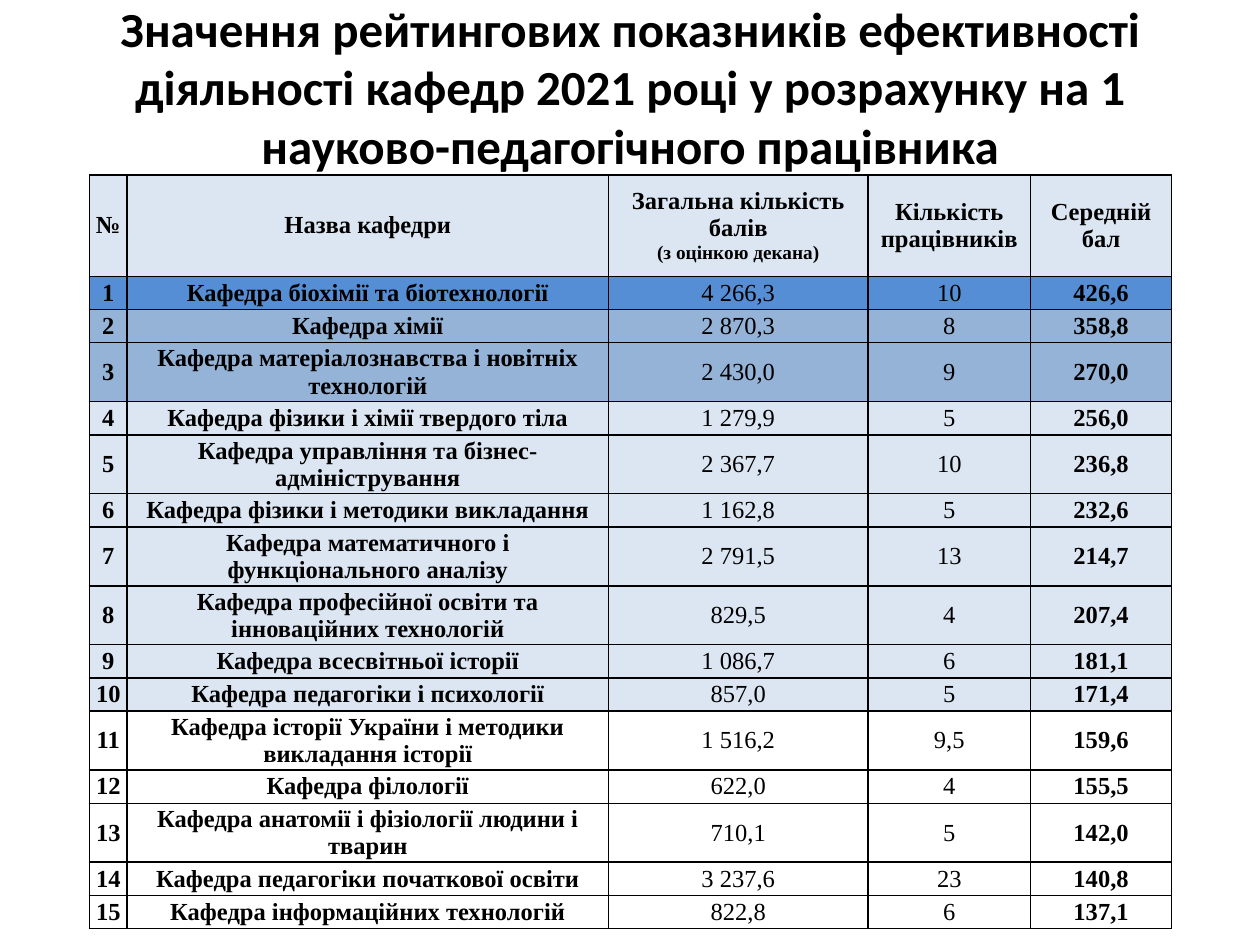
from lxml.etree import SubElement
from pptx import Presentation
from pptx.dml.color import RGBColor
from pptx.enum.text import MSO_ANCHOR as Anchor, PP_ALIGN as Align
from pptx.oxml.ns import qn
from pptx.util import Inches, Pt

HEAD = ["№", "Назва кафедри", "Загальна кількість балів\n(з оцінкою декана)",
        "Кількість працівників", "Середній бал"]
DATA = [
    ("Кафедра біохімії та біотехнології", "4 266,3", "10", "426,6"),
    ("Кафедра хімії", "2 870,3", "8", "358,8"),
    ("Кафедра матеріалознавства і новітніх технологій", "2 430,0", "9", "270,0"),
    ("Кафедра фізики і хімії твердого тіла", "1 279,9", "5", "256,0"),
    ("Кафедра управління та бізнес-адміністрування", "2 367,7", "10", "236,8"),
    ("Кафедра фізики і методики викладання", "1 162,8", "5", "232,6"),
    ("Кафедра математичного і функціонального аналізу", "2 791,5", "13", "214,7"),
    ("Кафедра професійної освіти та інноваційних технологій", "829,5", "4", "207,4"),
    ("Кафедра всесвітньої історії", "1 086,7", "6", "181,1"),
    ("Кафедра педагогіки і психології", "857,0", "5", "171,4"),
    ("Кафедра історії України і методики викладання історії", "1 516,2", "9,5", "159,6"),
    ("Кафедра філології", "622,0", "4", "155,5"),
    ("Кафедра анатомії і фізіології людини і тварин", "710,1", "5", "142,0"),
    ("Кафедра педагогіки початкової освіти", "3 237,6", "23", "140,8"),
    ("Кафедра інформаційних технологій", "822,8", "6", "137,1"),
]
FILLS = ["DCE6F2", "558ED5"] + ["95B3D7"] * 2 + ["DCE6F2"] * 7 + ["FFFFFF"] * 5
COLS = [3, 38.2, 20.6, 12.9, 11.2]  # percent of slide width
TALL, LOW, HIGH = 10.74, 3.52, 5.74  # row heights, percent of slide height
TWO_LINE = {3, 5, 7, 8, 11, 13}


def style(para, font, size, bold=True):
    para.alignment = Align.CENTER
    para.font.name, para.font.size, para.font.bold = font, Pt(size), bold
    para.font.color.rgb = RGBColor.from_string("000000")


def frame(cell, color):
    """Draw a 1 pt line on all four sides of a cell."""
    props = cell._tc.get_or_add_tcPr()
    for i, side in enumerate(("lnL", "lnR", "lnT", "lnB")):
        line = props.makeelement(qn("a:" + side), {"w": str(Pt(1))})
        fill = SubElement(line, qn("a:solidFill"))
        SubElement(fill, qn("a:srgbClr"), val=color)
        props.insert(i, line)


deck = Presentation()
deck.slide_width, deck.slide_height = Inches(10), Inches(7.5)
wide, high = deck.slide_width / 100, deck.slide_height / 100
slide = deck.slides.add_slide(deck.slide_layouts[6])

title = slide.shapes.add_textbox(int(5 * wide), int(4 * high),
                                 int(90 * wide), int(10.27 * high)).text_frame
title.word_wrap = True
title.vertical_anchor = Anchor.MIDDLE
title.text = ("Значення рейтингових показників ефективності діяльності кафедр "
              "2021 році у розрахунку на 1 науково-педагогічного працівника")
style(title.paragraphs[0], "Calibri", 28)

rows = [HEAD] + [(str(n), *row) for n, row in enumerate(DATA, 1)]
sizes = [TALL] + [HIGH if n in TWO_LINE else LOW for n in range(1, len(rows))]
table = slide.shapes.add_table(len(rows), len(COLS), int(7.1 * wide), int(18.5 * high),
                               int(sum(COLS) * wide), int(sum(sizes) * high)).table
for col, share in zip(table.columns, COLS):
    col.width = int(share * wide)

for r, (row, share) in enumerate(zip(rows, sizes)):
    table.rows[r].height = int(share * high)
    for c, text in enumerate(row):
        cell = table.cell(r, c)
        cell.margin_left = cell.margin_right = Inches(0.02)
        cell.margin_top = cell.margin_bottom = 0
        cell.vertical_anchor = Anchor.MIDDLE
        cell.fill.solid()
        cell.fill.fore_color.rgb = RGBColor.from_string(FILLS[r])
        frame(cell, "000000")
        cell.text = text
        for i, para in enumerate(cell.text_frame.paragraphs):
            style(para, "Times New Roman", 11 if i else 14, r == 0 or c not in (2, 3))

deck.save("out.pptx")
